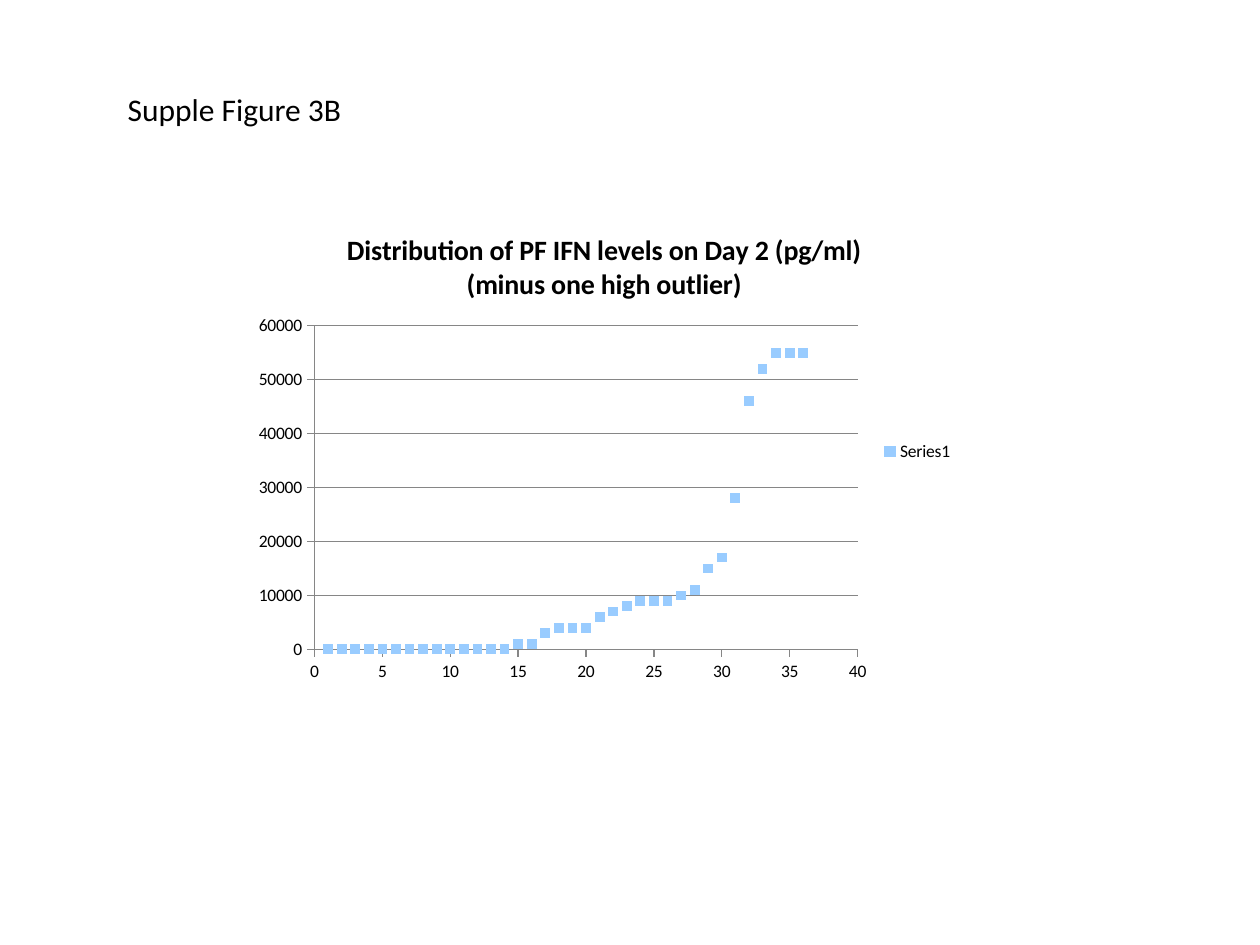
from lxml import etree
from pptx import Presentation
from pptx.chart.data import XyChartData
from pptx.dml.color import RGBColor
from pptx.enum.chart import (XL_CHART_TYPE, XL_LEGEND_POSITION,
                             XL_MARKER_STYLE, XL_TICK_MARK)
from pptx.enum.text import MSO_ANCHOR, PP_ALIGN
from pptx.oxml.ns import qn
from pptx.util import Cm, Pt

SCATTER = XL_CHART_TYPE.XY_SCATTER
RIGHT = XL_LEGEND_POSITION.RIGHT
SQUARE = XL_MARKER_STYLE.SQUARE
OUTSIDE = XL_TICK_MARK.OUTSIDE
NO_TICK = XL_TICK_MARK.NONE

FONT = "Calibri"
BLACK = RGBColor(0x00, 0x00, 0x00)
GREY = RGBColor(0x86, 0x86, 0x86)
LIGHT_BLUE = RGBColor(0x99, 0xCC, 0xFF)

FIGURE_LABEL = "Supple Figure 3B"
CHART_TITLE = "Distribution of PF IFN levels on Day 2 (pg/ml) (minus one high outlier)"
SERIES_NAME = "Series1"
IFN_LEVELS = [
    0, 0, 0, 0, 0, 0, 0, 0, 0, 0, 0, 0,
    0, 0, 1000, 1000, 3000, 4000, 4000, 4000, 6000, 7000, 8000, 9000,
    9000, 9000, 10000, 11000, 15000, 17000, 28000, 46000, 52000, 55000, 55000, 55000,
]
PLOT_AREA = {"x": 0.1, "y": 0.24, "w": 0.75, "h": 0.67}  # shares of the chart


def write(frame, text, size, bold=False, align=PP_ALIGN.LEFT):
    frame.text = text
    para = frame.paragraphs[0]
    para.alignment = align
    font = para.runs[0].font
    font.name, font.size, font.bold = FONT, Pt(size), bold
    font.color.rgb = BLACK


def place_plot(chart, shares):
    """Fix the inner plot area, which python-pptx cannot position."""
    plot_area = chart.plots[0]._element.getparent()
    for layout in plot_area.findall(qn("c:layout")):
        plot_area.remove(layout)
    layout = etree.Element(qn("c:layout"))
    manual = etree.SubElement(layout, qn("c:manualLayout"))
    settings = {"layoutTarget": "inner", "xMode": "edge", "yMode": "edge", **shares}
    for tag, value in settings.items():
        etree.SubElement(manual, qn(f"c:{tag}")).set("val", str(value))
    plot_area.insert(0, layout)


def format_axis(axis, maximum, step, gridlines):
    axis.minimum_scale, axis.maximum_scale, axis.major_unit = 0, maximum, step
    axis.major_tick_mark, axis.minor_tick_mark = OUTSIDE, NO_TICK
    axis.has_major_gridlines = gridlines
    lines = [axis.format.line]
    if gridlines:
        lines.append(axis.major_gridlines.format.line)
    for line in lines:
        line.color.rgb = GREY
        line.width = Pt(0.75)
    axis.tick_labels.number_format = "General"
    axis.tick_labels.number_format_is_linked = False


def add_scatter(page):
    data = XyChartData()
    points = data.add_series(SERIES_NAME)
    for rank, level in enumerate(IFN_LEVELS, start=1):
        points.add_data_point(rank, level)
    chart = page.shapes.add_chart(SCATTER, Cm(4.88), Cm(4.23), Cm(14.6), Cm(9.74), data).chart
    chart.font.name, chart.font.size = FONT, Pt(10)
    chart.font.color.rgb = BLACK

    chart.has_title = True
    write(chart.chart_title.text_frame, CHART_TITLE, 16, bold=True, align=PP_ALIGN.CENTER)
    chart.chart_title.include_in_layout = False
    chart.has_legend = True
    chart.legend.position = RIGHT
    chart.legend.include_in_layout = False

    format_axis(chart.category_axis, 40, 5, gridlines=False)
    format_axis(chart.value_axis, 60000, 10000, gridlines=True)
    place_plot(chart, PLOT_AREA)

    chart.plots[0].vary_by_categories = False
    series = chart.plots[0].series[0]
    series.smooth = False
    series.format.line.fill.background()
    marker = series.marker
    marker.style, marker.size = SQUARE, 5
    marker.format.fill.solid()
    marker.format.fill.fore_color.rgb = LIGHT_BLUE
    marker.format.line.fill.background()


def main():
    deck = Presentation()
    deck.slide_width, deck.slide_height = Cm(25.4), Cm(19.05)
    page = deck.slides.add_slide(deck.slide_layouts.get_by_name("Title Only"))
    add_scatter(page)

    label = page.shapes.title
    label.left, label.top, label.width, label.height = Cm(2.32), Cm(1.68), Cm(4.88), Cm(1.02)
    label.text_frame.word_wrap = False
    label.text_frame.vertical_anchor = MSO_ANCHOR.TOP
    write(label.text_frame, FIGURE_LABEL, 18)

    deck.save("out.pptx")


if __name__ == "__main__":
    main()
